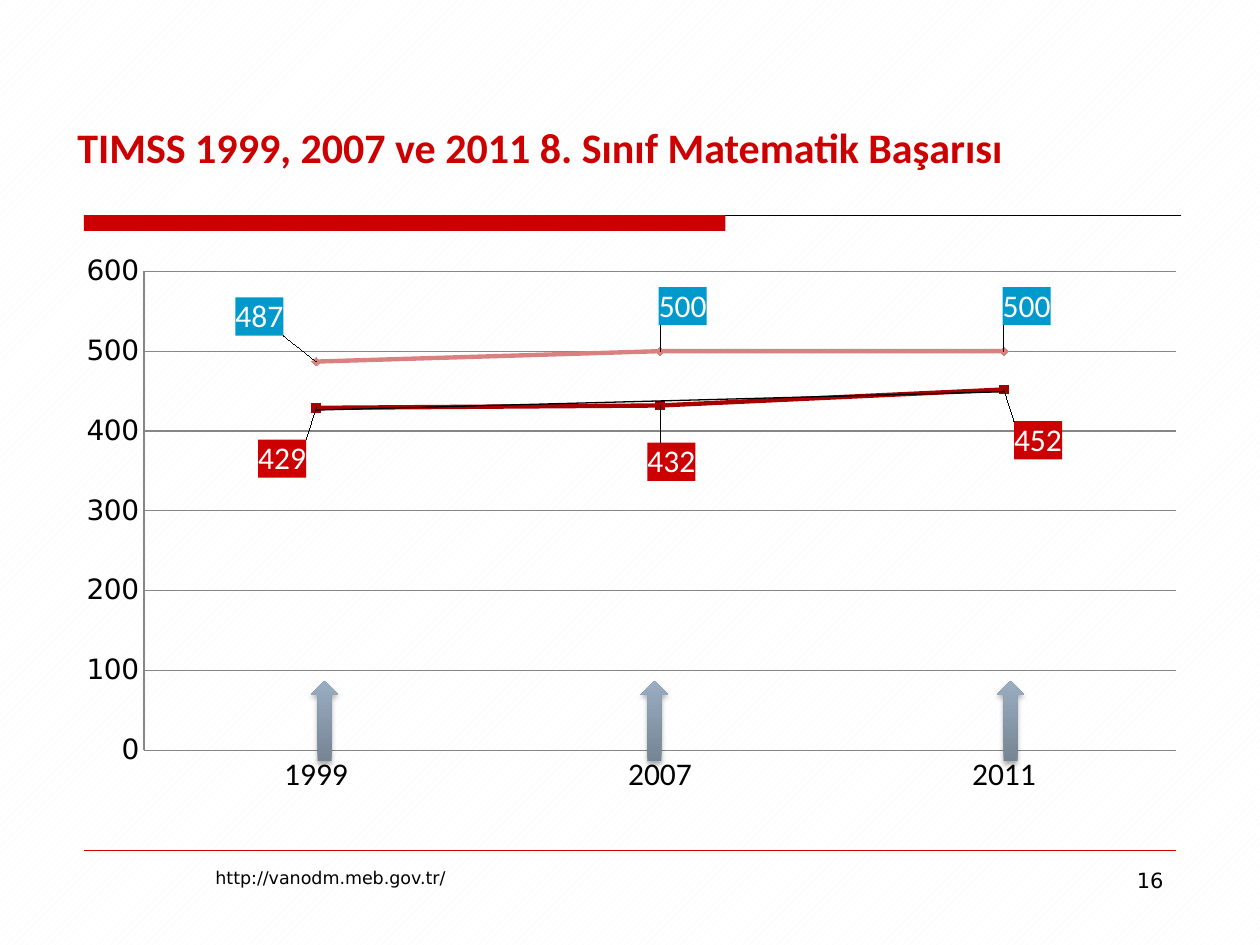
import pptx
import pptx.chart.data
import pptx.dml.color
import pptx.enum.chart
import pptx.enum.dml
import pptx.enum.shapes
import pptx.enum.text
import pptx.oxml
import pptx.oxml.ns
import pptx.util

Pt = pptx.util.Pt
RGBColor = pptx.dml.color.RGBColor
qn = pptx.oxml.ns.qn
PP_ALIGN = pptx.enum.text.PP_ALIGN
MARKER = pptx.enum.chart.XL_MARKER_STYLE

RED = RGBColor(0xCC, 0x00, 0x00)
DARK_RED = RGBColor(0xA8, 0x00, 0x00)
PINK = RGBColor(0xD9, 0x80, 0x80)
BLUE = RGBColor(0x00, 0x99, 0xCC)
BLACK = RGBColor(0x00, 0x00, 0x00)
WHITE = RGBColor(0xFF, 0xFF, 0xFF)
GRAY = RGBColor(0x86, 0x86, 0x86)
STRIPE = RGBColor(0xF7, 0xF7, 0xF7)
ARROW_DARK = RGBColor(0x76, 0x85, 0x93)
ARROW_LIGHT = RGBColor(0x9A, 0xAD, 0xC1)

BODY_FONT = "DejaVu Sans"
CHART_NS = pptx.oxml.ns.nsdecls("c", "a")
DRAW_NS = pptx.oxml.ns.nsdecls("a")


def set_font(font, size, color=BLACK, name=BODY_FONT, bold=False):
    font.size = Pt(size)
    font.name = name
    font.bold = bold
    font.color.rgb = color


def write_text(sp, text, align=PP_ALIGN.LEFT,
               anchor=pptx.enum.text.MSO_ANCHOR.TOP, **font):
    tf = sp.text_frame
    tf.word_wrap = True
    tf.vertical_anchor = anchor
    p = tf.paragraphs[0]
    p.alignment = align
    r = p.add_run()
    r.text = text
    set_font(r.font, **font)


def add_title(s, text):
    sp = s.shapes.title
    sp.left, sp.top, sp.width, sp.height = Pt(37), Pt(64), Pt(663), Pt(40)
    write_text(sp, text, anchor=pptx.enum.text.MSO_ANCHOR.MIDDLE,
               size=24, color=RED, name="Calibri", bold=True)


def add_text(s, text, left, width, **kwargs):
    sp = s.shapes.add_textbox(Pt(left), Pt(492), Pt(width), Pt(37))
    write_text(sp, text, **kwargs)


def add_rule(s, left, right, y, color, weight):
    line = s.shapes.add_connector(pptx.enum.shapes.MSO_CONNECTOR.STRAIGHT,
                                  Pt(left), Pt(y), Pt(right), Pt(y))
    line.line.color.rgb = color
    line.line.width = Pt(weight)
    line._element.spPr.append(pptx.oxml.parse_xml(f"<a:effectLst {DRAW_NS}/>"))


def add_bar(s):
    sp = s.shapes.add_shape(pptx.enum.shapes.MSO_SHAPE.RECTANGLE,
                            Pt(48), Pt(123), Pt(366.5), Pt(9))
    sp.shadow.inherit = False
    sp.fill.solid()
    sp.fill.fore_color.rgb = RED
    sp.line.fill.background()


def add_arrow(s, left):
    sp = s.shapes.add_shape(pptx.enum.shapes.MSO_SHAPE.UP_ARROW,
                            Pt(left), Pt(389), Pt(16), Pt(46))
    sp.fill.gradient()
    sp.fill.gradient_angle = 90
    for stop, color in zip(sp.fill.gradient_stops, (ARROW_DARK, ARROW_LIGHT)):
        stop.color.rgb = color
    sp.line.fill.background()
    sp.shadow.inherit = False
    sp._element.spPr.find(qn("a:effectLst")).append(pptx.oxml.parse_xml(
        f'<a:outerShdw {DRAW_NS} blurRad="{Pt(3.1)}" dist="{Pt(1.8)}" '
        'dir="5400000" rotWithShape="0"><a:srgbClr val="000000">'
        '<a:alpha val="35000"/></a:srgbClr></a:outerShdw>'))


def layout_xml(x, y, extra=""):
    return pptx.oxml.parse_xml(
        f'<c:layout {CHART_NS}><c:manualLayout>{extra}'
        f'<c:x val="{x}"/><c:y val="{y}"/></c:manualLayout></c:layout>')


def place_plot(chart, x, y, w, h):
    layout = layout_xml(x, y, '<c:layoutTarget val="inner"/>'
                        '<c:xMode val="edge"/><c:yMode val="edge"/>')
    for tag, value in (("w", w), ("h", h)):
        layout[0].append(pptx.oxml.parse_xml(
            f'<c:{tag} {CHART_NS} val="{value}"/>'))
    area = chart._chartSpace.chart.plotArea
    for old in area.findall(qn("c:layout")):
        area.remove(old)
    area.insert(0, layout)


def format_label(label, element, color):
    set_font(label.font, 18, WHITE, "Calibri")
    label.position = pptx.enum.chart.XL_LABEL_POSITION.CENTER
    for old in element.findall(qn("c:spPr")):
        element.remove(old)
    element.find(qn("c:txPr")).addprevious(pptx.oxml.parse_xml(
        f'<c:spPr {CHART_NS}><a:solidFill><a:srgbClr val="{color}"/>'
        '</a:solidFill></c:spPr>'))


def label_points(series, color, offsets):
    labels = series.data_labels
    labels.show_value = True
    group = series._element.find(qn("c:dLbls"))
    format_label(labels, group, color)
    for old in group.findall(qn("c:showLeaderLines")):
        group.remove(old)
    for i, (x, y) in enumerate(offsets):
        label = series.points[i].data_label
        set_font(label.font, 18, WHITE, "Calibri")
        idx = group.xpath(f"c:dLbl/c:idx[@val='{i}']")[0]
        format_label(label, idx.getparent(), color)
        idx.addnext(layout_xml(x, y))


def format_series(series, color, marker):
    series.smooth = False
    series.format.line.color.rgb = color
    series.format.line.width = Pt(2.5)
    series.marker.style = marker
    series.marker.size = 5
    series.marker.format.fill.solid()
    series.marker.format.fill.fore_color.rgb = color
    series.marker.format.line.color.rgb = color


def add_trend(series):
    series._element.find(qn("c:cat")).addprevious(pptx.oxml.parse_xml(
        f'<c:trendline {CHART_NS}><c:spPr><a:ln w="{Pt(0.75)}"><a:solidFill>'
        f'<a:srgbClr val="{BLACK}"/></a:solidFill></a:ln></c:spPr>'
        '<c:trendlineType val="linear"/><c:dispRSqr val="0"/>'
        '<c:dispEq val="0"/></c:trendline>'))


def format_axis(axis, size, name):
    axis.major_tick_mark = pptx.enum.chart.XL_TICK_MARK.NONE
    axis.minor_tick_mark = pptx.enum.chart.XL_TICK_MARK.NONE
    axis.format.line.color.rgb = GRAY
    axis.format.line.width = Pt(0.75)
    set_font(axis.tick_labels.font, size, name=name)


def add_score_chart(s):
    data = pptx.chart.data.CategoryChartData()
    data.categories = ["1999", "2007", "2011"]
    data.add_series("Series 1", (429, 432, 452))
    data.add_series("Series 2", (487, 500, 500))
    chart = s.shapes.add_chart(
        pptx.enum.chart.XL_CHART_TYPE.LINE_MARKERS,
        Pt(37), Pt(139), Pt(648), Pt(322), data).chart
    chart.has_legend = False
    chart.has_title = False
    set_font(chart.font, 10)
    chart.plots[0].vary_by_categories = False
    place_plot(chart, 0.07, 0.05, 0.91, 0.85)
    format_axis(chart.category_axis, 18, "Calibri")
    axis = chart.value_axis
    format_axis(axis, 16, BODY_FONT)
    axis.minimum_scale, axis.maximum_scale, axis.major_unit = 0, 600, 100
    axis.has_major_gridlines = True
    axis.major_gridlines.format.line.color.rgb = GRAY
    axis.major_gridlines.format.line.width = Pt(0.75)
    lower, upper = chart.plots[0].series
    format_series(lower, DARK_RED, MARKER.SQUARE)
    label_points(lower, RED, ((-0.03, 0.09), (0.01, 0.1), (0.03, 0.09)))
    add_trend(lower)
    format_series(upper, PINK, MARKER.DIAMOND)
    label_points(upper, BLUE, ((-0.05, -0.08), (0.02, -0.08), (0.02, -0.08)))


def set_background(s):
    fill = s.background.fill
    fill.patterned()
    fill.pattern = pptx.enum.dml.MSO_PATTERN.WIDE_UPWARD_DIAGONAL
    fill.fore_color.rgb = STRIPE
    fill.back_color.rgb = WHITE


def main():
    prs = pptx.Presentation()
    prs.slide_width, prs.slide_height = Pt(720), Pt(540)
    s = prs.slides.add_slide(prs.slide_layouts[5])
    set_background(s)
    add_rule(s, 48, 675, 123, BLACK, 0.25)
    add_bar(s)
    add_rule(s, 48, 672, 486, RED, 0.25)
    add_score_chart(s)
    for left in (177.5, 366, 569.5):
        add_arrow(s, left)
    add_title(s, "TIMSS 1999, 2007 ve 2011 8. Sınıf Matematik Başarısı")
    add_text(s, "http://vanodm.meb.gov.tr/", 116, 358, size=10)
    add_text(s, "16", 516, 156, size=12, align=PP_ALIGN.RIGHT)
    prs.save("out.pptx")


if __name__ == "__main__":
    main()
